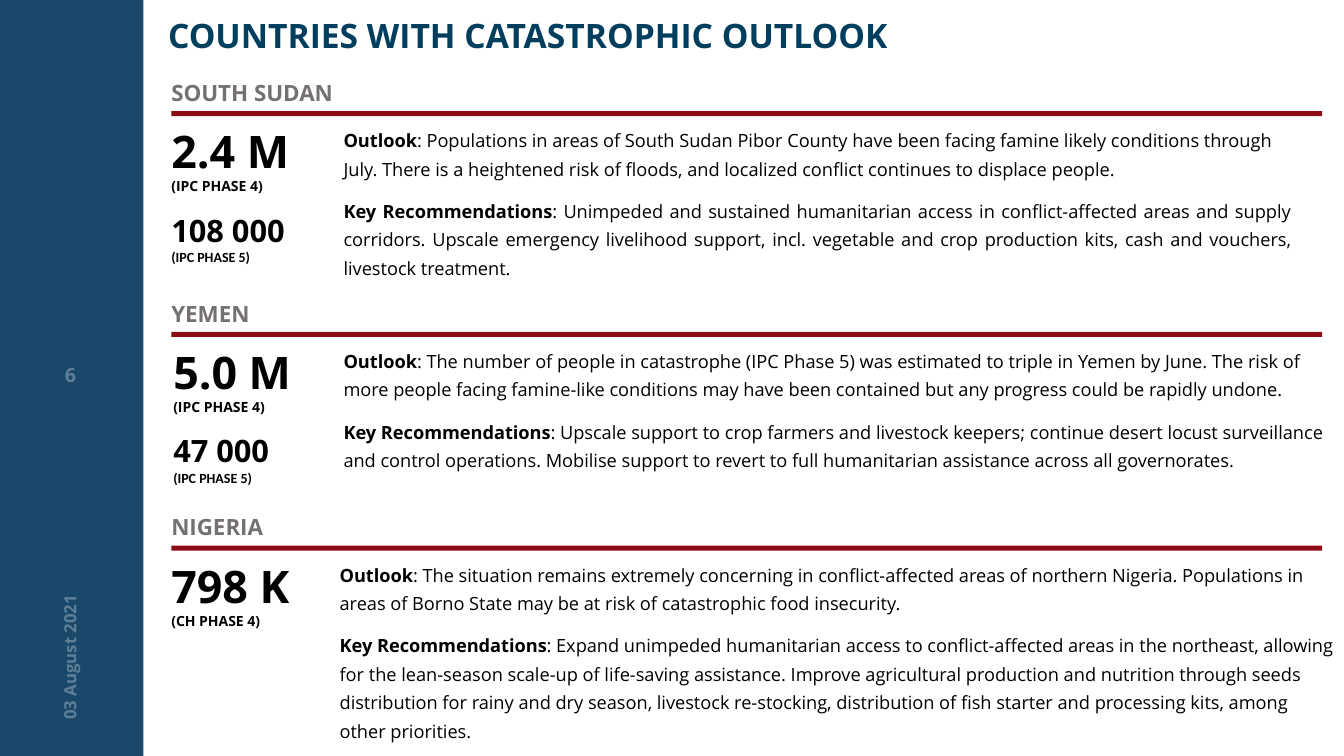
from lxml import etree
from pptx import Presentation
from pptx.dml.color import RGBColor
from pptx.enum.shapes import MSO_SHAPE
from pptx.enum.text import MSO_ANCHOR, PP_ALIGN
from pptx.oxml.ns import qn
from pptx.util import Pt

RECT = MSO_SHAPE.RECTANGLE
TOP, MIDDLE, BOTTOM = MSO_ANCHOR.TOP, MSO_ANCHOR.MIDDLE, MSO_ANCHOR.BOTTOM
LEFT, CENTER, JUSTIFY = PP_ALIGN.LEFT, PP_ALIGN.CENTER, PP_ALIGN.JUSTIFY

NAVY, TITLE_BLUE, RED, GREY = "19486A", "003E5E", "8C0C14", "767171"
WHITE, BLACK = "FFFFFF", "000000"
MARGIN = 122.4

SECTIONS = [
    {
        "name": "SOUTH SUDAN",
        "top": 52.6,
        "stats_box": (122.4, 108.7),
        "stats": [("2.4 M", "(IPC PHASE 4)"), ("108 000", "(IPC PHASE 5)")],
        "body_box": (238.3, 690.5, 126),
        "align": JUSTIFY,
        "outlook": "Populations in areas of South Sudan Pibor County have been facing "
                   "famine likely conditions through July. There is a heightened risk of "
                   "floods, and localized conflict continues to displace people.",
        "advice": "Unimpeded and sustained humanitarian access in conflict-affected areas "
                  "and supply corridors. Upscale emergency livelihood support, incl. "
                  "vegetable and crop production kits, cash and vouchers, livestock "
                  "treatment.",
    },
    {
        "name": "YEMEN",
        "top": 210.2,
        "stats_box": (123.8, 108.7),
        "stats": [("5.0 M", "(IPC PHASE 4)"), ("47 000", "(IPC PHASE 5)")],
        "body_box": (238.3, 721.7, 108.7),
        "align": LEFT,
        "outlook": "The number of people in catastrophe (IPC Phase 5) was estimated to "
                   "triple in Yemen by June. The risk of more people facing famine-like "
                   "conditions may have been contained but any progress could be rapidly "
                   "undone.",
        "advice": "Upscale support to crop farmers and livestock keepers; continue desert "
                  "locust surveillance and control operations. Mobilise support to revert "
                  "to full humanitarian assistance across all governorates.",
    },
    {
        "name": "NIGERIA",
        "top": 362.9,
        "stats_box": (122.4, 58.6),
        "stats": [("798 K", "(CH PHASE 4)")],
        "body_box": (235.5, 724.5, 132.5),
        "align": LEFT,
        "outlook": "The situation remains extremely concerning in conflict-affected areas "
                   "of northern Nigeria. Populations in areas of Borno State may be at risk "
                   "of catastrophic food insecurity.",
        "advice": "Expand unimpeded humanitarian access to conflict-affected areas in the "
                  "northeast, allowing for the lean-season scale-up of life-saving "
                  "assistance. Improve agricultural production and nutrition through seeds "
                  "distribution for rainy and dry season, livestock re-stocking, "
                  "distribution of fish starter and processing kits, among other "
                  "priorities.",
    },
]


def set_color(color, value, alpha=None):
    """Set a colour from a hex string, with an optional opacity in percent."""
    color.rgb = RGBColor.from_string(value)
    if alpha is not None:
        srgb = color._xFill.find(qn("a:srgbClr"))
        etree.SubElement(srgb, qn("a:alpha"), val=str(alpha * 1000))


def set_format(obj, values):
    """Set each attribute named in a dict."""
    for name, value in values.items():
        setattr(obj, name, value)


def add_rect(s, x, y, w, h, fill):
    """Add a plain filled rectangle."""
    sp = s.shapes.add_shape(RECT, Pt(x), Pt(y), Pt(w), Pt(h))
    sp.shadow.inherit = False
    sp.fill.solid()
    set_color(sp.fill.fore_color, fill)
    sp.line.fill.background()


def add_box(s, x, y, w, h, anchor=TOP, inset=7.2):
    """Add an empty wrapping text box."""
    sp = s.shapes.add_textbox(Pt(x), Pt(y), Pt(w), Pt(h))
    set_format(sp.text_frame, {
        "word_wrap": True,
        "vertical_anchor": anchor,
        "margin_left": Pt(inset),
        "margin_right": Pt(inset),
    })
    return sp


def add_paragraph(tf, **values):
    """Return a formatted paragraph, reusing the empty first one."""
    first = tf.paragraphs[0]
    p = tf.add_paragraph() if first.runs else first
    set_format(p, values)
    return p


def add_run(p, text, size, color=BLACK, alpha=None, bold=True, name="Open Sans"):
    """Add a run of text to a paragraph."""
    r = p.add_run()
    r.text = text
    set_format(r.font, {"size": Pt(size), "bold": bold, "name": name})
    r.font.fill.solid()
    set_color(r.font.fill.fore_color, color, alpha)


def add_stats(s, x, y, h, stats):
    """Add the key figures, each with its phase below."""
    tf = add_box(s, x, y, 116, h, BOTTOM, 0).text_frame
    styles = [(32, 0, "Open Sans"), (22, 12, "Calibri")]
    for (figure, phase), (size, gap, name) in zip(stats, styles):
        add_run(add_paragraph(tf, space_before=Pt(gap)), figure, size)
        add_run(add_paragraph(tf), phase, 10, name=name)


def add_body(s, x, y, w, h, outlook, advice, align):
    """Add the outlook and the recommendations."""
    tf = add_box(s, x, y, w, h).text_frame
    parts = [("Outlook", outlook, 0, LEFT), ("Key Recommendations", advice, 10, align)]
    for label, text, gap, alignment in parts:
        p = add_paragraph(tf, line_spacing=1.3, space_before=Pt(gap), alignment=alignment)
        add_run(p, label, 13)
        add_run(p, ": " + text, 13, bold=False)


def add_section(s, section):
    """Add one country: heading, rule, figures and text."""
    y = section["top"]
    tf = add_box(s, MARGIN, y, 136, 26.6, BOTTOM, 0).text_frame
    add_run(add_paragraph(tf), section["name"], 16, GREY)
    add_rect(s, MARGIN, y + 26.8, 822, 3.6, RED)
    x, h = section["stats_box"]
    add_stats(s, x, y + 31.7, h, section["stats"])
    x, w, h = section["body_box"]
    add_body(s, x, y + 31.7, w, h, section["outlook"], section["advice"], section["align"])


def add_frame(s):
    """Add the background, title, date and page number."""
    s.background.fill.solid()
    set_color(s.background.fill.fore_color, NAVY)
    add_rect(s, 102.4, 0, 857.6, 540, WHITE)
    p = add_paragraph(add_box(s, 113, 11.5, 808, 31, MIDDLE).text_frame, line_spacing=0.9)
    add_run(p, "COUNTRIES WITH CATASTROPHIC OUTLOOK", 24, TITLE_BLUE)
    sp = add_box(s, -35.3, 421.9, 170, 28.8, MIDDLE)
    sp.rotation = 270
    add_run(add_paragraph(sp.text_frame), "03 August 2021", 12, WHITE, 30)
    p = add_paragraph(add_box(s, 28, 255.6, 44.6, 28.8).text_frame, alignment=CENTER)
    add_run(p, "6", 14, WHITE, 30)


def main():
    """Build the slide and save it."""
    prs = Presentation()
    set_format(prs, {"slide_width": Pt(960), "slide_height": Pt(540)})
    s = prs.slides.add_slide(prs.slide_layouts[6])
    add_frame(s)
    for section in SECTIONS:
        add_section(s, section)
    prs.save("out.pptx")


if __name__ == "__main__":
    main()
